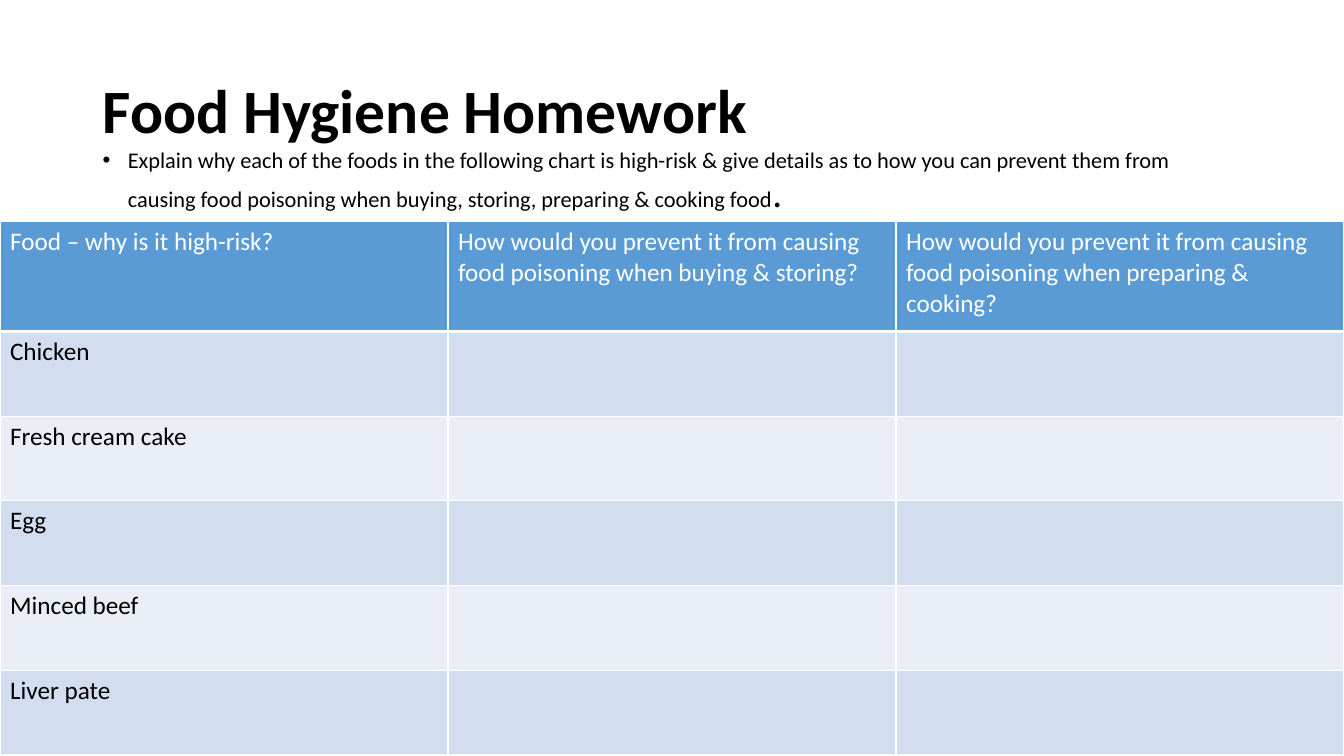
from lxml.etree import SubElement
from pptx import Presentation
from pptx.dml.color import RGBColor
from pptx.enum.text import MSO_ANCHOR as Anchor
from pptx.oxml.ns import qn
from pptx.util import Inches, Pt

FONT = "Calibri"
BLACK, WHITE = "000000", "FFFFFF"
HEADER_FILL = "5B9BD5"
BAND_FILLS = ("D2DEEF", "EAEFF7")

HEADERS = (
    "Food – why is it high-risk?",
    "How would you prevent it from causing food poisoning when buying & storing?",
    "How would you prevent it from causing food poisoning when preparing & cooking?",
)
FOODS = ("Chicken", "Fresh cream cake", "Egg", "Minced beef", "Liver pate")
TASK = (
    "Explain why each of the foods in the following chart is high-risk & give details "
    "as to how you can prevent them from causing food poisoning when buying, storing, "
    "preparing & cooking food"
)


def color(hex_string):
    return RGBColor.from_string(hex_string)


def style_font(font, size, hex_string, bold=False):
    font.name = FONT
    font.size = Pt(size)
    font.bold = bold
    font.color.rgb = color(hex_string)


def add_text(slide, left, top, width, height, text, size, bold=False, anchor=Anchor.TOP):
    """Add a wrapped text box and return its paragraph."""
    box = slide.shapes.add_textbox(Inches(left), Inches(top), Inches(width), Inches(height))
    frame = box.text_frame
    frame.word_wrap = True
    frame.vertical_anchor = anchor
    paragraph = frame.paragraphs[0]
    paragraph.line_spacing = 0.9
    paragraph.add_run().text = text
    style_font(paragraph.font, size, BLACK, bold)
    return paragraph


def add_bullet(paragraph, indent):
    properties = paragraph._p.get_or_add_pPr()
    properties.set("marL", str(Inches(indent)))
    properties.set("indent", str(-Inches(indent)))
    # Bullet elements belong before the default run properties
    defaults = properties.find(qn("a:defRPr"))
    bullet_font = SubElement(properties, qn("a:buFont"), typeface="Arial")
    bullet = SubElement(properties, qn("a:buChar"), char="•")
    if defaults is not None:
        defaults.addprevious(bullet_font)
        defaults.addprevious(bullet)


def set_borders(cell, bottom_width):
    """Draw white borders; called before the fill so the XML order holds."""
    properties = cell._tc.get_or_add_tcPr()
    for side, width in (("L", 1), ("R", 1), ("T", 1), ("B", bottom_width)):
        line = SubElement(properties, qn(f"a:ln{side}"), w=str(Pt(width)))
        fill = SubElement(line, qn("a:solidFill"))
        SubElement(fill, qn("a:srgbClr"), val=WHITE)


def fill_cell(cell, text, fill, text_color, bottom_width=1):
    set_borders(cell, bottom_width)
    cell.fill.solid()
    cell.fill.fore_color.rgb = color(fill)
    cell.text = text
    style_font(cell.text_frame.paragraphs[0].font, 18, text_color)


def add_food_table(slide, left, top, width, header_height, row_height):
    row_count, column_count = len(FOODS) + 1, len(HEADERS)
    height = header_height + len(FOODS) * row_height
    table = slide.shapes.add_table(
        row_count, column_count, Inches(left), Inches(top), Inches(width), Inches(height)
    ).table
    for column in table.columns:
        column.width = Inches(width / column_count)
    for row in table.rows:
        row.height = Inches(row_height)
    table.rows[0].height = Inches(header_height)

    for column, header in enumerate(HEADERS):
        fill_cell(table.cell(0, column), header, HEADER_FILL, WHITE, bottom_width=3)
    for index, food in enumerate(FOODS):
        for column in range(column_count):
            text = food if column == 0 else ""
            fill_cell(table.cell(index + 1, column), text, BAND_FILLS[index % 2], BLACK)


def main():
    presentation = Presentation()
    presentation.slide_width = Inches(13.33)
    presentation.slide_height = Inches(7.5)
    slide = presentation.slides.add_slide(presentation.slide_layouts[6])

    # Title
    add_text(slide, 0.92, 0.4, 11.5, 1.45, "Food Hygiene Homework", 44, True, Anchor.MIDDLE)

    # Task, closed by a larger full stop
    task = add_text(slide, 0.92, 1.43, 11.5, 6.07, TASK, 16)
    task.space_before = Pt(10)
    add_bullet(task, 0.25)
    full_stop = task.add_run()
    full_stop.text = "."
    full_stop.font.size = Pt(28)

    # Worksheet table
    add_food_table(slide, 0, 2.2, 13.33, 1.09, 0.84)

    presentation.save("out.pptx")


if __name__ == "__main__":
    main()
